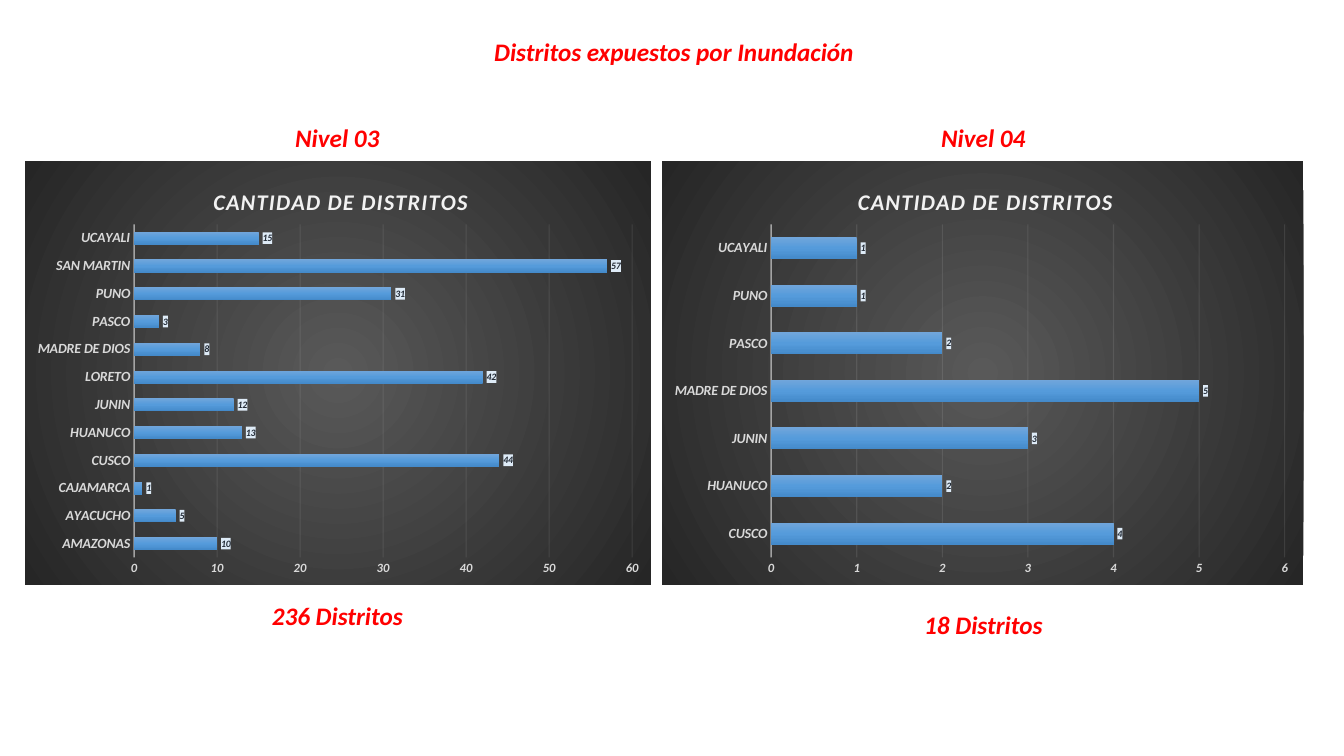
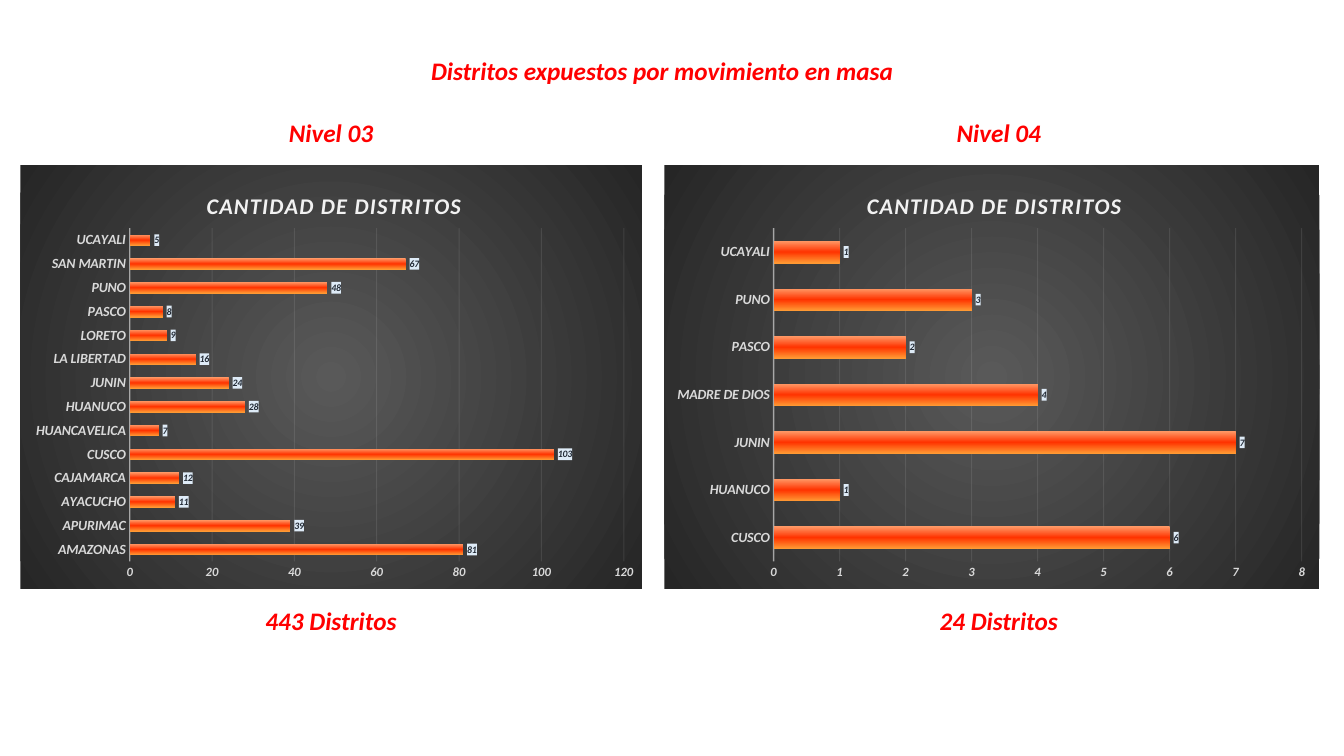
import pptx
import pptx.chart.data
import pptx.dml.color
import pptx.enum.chart
import pptx.enum.text
import pptx.oxml
import pptx.oxml.ns
import pptx.util

Pt = pptx.util.Pt
RGB = pptx.dml.color.RGBColor
RED = RGB(0xFF, 0x00, 0x00)
PALE = RGB(0xF2, 0xF2, 0xF2)
GREY = RGB(0xD9, 0xD9, 0xD9)
NAVY = RGB(0x22, 0x2A, 0x35)
ICE = RGB(0xDE, 0xEB, 0xF7)
DARK = [RGB(0x59, 0x59, 0x59), RGB(0x26, 0x26, 0x26)]
BLUE = [RGB(0x71, 0xA6, 0xDB), RGB(0x55, 0x9B, 0xDB), RGB(0x44, 0x8A, 0xCA)]
FIRE = [RGB(0xFF, 0x99, 0x66), RGB(0xFF, 0x33, 0x00), RGB(0xFF, 0x99, 0x33)]
FONT = "Calibri"
DOWN = '<a:lin ang="5400000" scaled="0"/>'
ROUND = ('<a:path path="circle"><a:fillToRect l="50000" t="50000" '
         'r="50000" b="50000"/></a:path>')


def node(text):
    return pptx.oxml.parse_xml(
        text.replace(">", " " + pptx.oxml.ns.nsdecls("a", "c") + ">", 1))


def blend(tints, way):
    step = 100000 // (len(tints) - 1)
    stops = "".join(f'<a:gs pos="{i * step}"><a:srgbClr val="{tint}"/></a:gs>'
                    for i, tint in enumerate(tints))
    return node(f'<c:spPr><a:gradFill rotWithShape="1"><a:gsLst>{stops}</a:gsLst>'
                f'{way}</a:gradFill><a:ln><a:noFill/></a:ln></c:spPr>')


def place(**parts):
    inner = '<c:layoutTarget val="inner"/>' if "w" in parts else ""
    modes = '<c:xMode val="edge"/><c:yMode val="edge"/>'
    spots = "".join(f'<c:{key} val="{val:.3f}"/>' for key, val in parts.items())
    return node(f"<c:layout><c:manualLayout>{inner}{modes}{spots}"
                "</c:manualLayout></c:layout>")


def fade(root, route, share):
    for tint in root.xpath(route + "//a:srgbClr"):
        tint.append(node(f'<a:alpha val="{share * 1000}"></a:alpha>'))


def clear(root):
    for old in root.xpath("c:layout"):
        root.remove(old)


class Deck:
    def __init__(self):
        self.show = pptx.Presentation()
        self.show.slide_width = Pt(960)
        self.show.slide_height = Pt(540)
        self.slide = None

    def page(self):
        self.slide = self.show.slides.add_slide(self.show.slide_layouts[6])

    def style(self, font, size, tint):
        font.name, font.size = FONT, Pt(size)
        font.bold = font.italic = True
        font.color.rgb = tint

    def label(self, text, mid, top, width=124, wrap=True):
        box = self.slide.shapes.add_textbox(
            Pt(mid - width / 2), Pt(top), Pt(width), Pt(29))
        frame = box.text_frame
        frame.word_wrap = wrap
        frame.text = text
        para = frame.paragraphs[0]
        para.alignment = pptx.enum.text.PP_ALIGN.CENTER
        self.style(para.runs[0].font, 18, RED)

    def bars(self, rows, tints, left, top, width, limit, step):
        high = 302.4
        data = pptx.chart.data.CategoryChartData(number_format="#,##0")
        data.categories = list(rows)
        data.add_series("Series 1", list(rows.values()))
        chart = self.slide.shapes.add_chart(
            pptx.enum.chart.XL_CHART_TYPE.BAR_CLUSTERED,
            Pt(left), Pt(top), Pt(width), Pt(high), data).chart
        chart.has_legend = False
        chart.font.name, chart.font.size = FONT, Pt(10)
        chart._chartSpace.xpath("c:chart")[0].addnext(blend(DARK, ROUND))
        self.head(chart, width)
        area = chart._chartSpace.xpath("c:chart/c:plotArea")[0]
        clear(area)
        area.insert(0, place(x=78 / width, y=45 / high,
                             w=(width - 91) / width, h=238 / high))
        self.axes(chart, limit, step)
        self.fill(chart.plots[0], tints)

    def head(self, chart, width):
        chart.has_title = True
        title = chart.chart_title
        title.include_in_layout = False
        title.text_frame.text = "CANTIDAD DE DISTRITOS"
        run = title.text_frame.paragraphs[0].runs[0]
        self.style(run.font, 16, PALE)
        run.font._element.set("spc", "100")
        clear(title._element)
        title._element.xpath("c:tx")[0].addnext(
            place(x=0.5 - 92 / width, y=0.05))

    def axes(self, chart, limit, step):
        cat, val = chart.category_axis, chart.value_axis
        for axis, size in ((cat, 10), (val, 9)):
            axis.major_tick_mark = pptx.enum.chart.XL_TICK_MARK.NONE
            axis.minor_tick_mark = pptx.enum.chart.XL_TICK_MARK.NONE
            self.style(axis.tick_labels.font, size, GREY)
        cat.format.line.width = Pt(1)
        cat.format.line.color.rgb = PALE
        fade(cat._element, "c:spPr", 54)
        val.minimum_scale, val.maximum_scale = 0, limit
        val.major_unit = step
        val.format.line.fill.background()
        grid = val.major_gridlines.format.line
        grid.width = Pt(0.75)
        grid.color.rgb = PALE
        fade(val._element, "c:majorGridlines", 10)

    def fill(self, plot, tints):
        plot.gap_width, plot.overlap = 115, -20
        plot.vary_by_categories = False
        series = plot.series[0]
        shape = series._element.get_or_add_spPr()
        shape.getparent().replace(shape, blend(tints, DOWN))
        plot.has_data_labels = True
        notes = plot.data_labels
        notes.show_value = True
        notes.number_format = "#,##0"
        notes.number_format_is_linked = False
        notes.position = pptx.enum.chart.XL_LABEL_POSITION.OUTSIDE_END
        self.style(notes.font, 7, NAVY)
        notes._element.xpath("c:txPr")[0].addprevious(node(
            f'<c:spPr><a:solidFill><a:srgbClr val="{ICE}"/></a:solidFill></c:spPr>'))


PAGES = [
    dict(title=("Distritos expuestos por Inundación", 481.5, 22.5, 274),
         tints=BLUE, level=83.5, top=115.2, sides=[
             dict(name="Nivel 03", total="236 Distritos", mid=241, foot=425.5,
                  left=18, width=447, limit=60, step=10,
                  rows={"AMAZONAS": 10, "AYACUCHO": 5, "CAJAMARCA": 1,
                        "CUSCO": 44, "HUANUCO": 13, "JUNIN": 12,
                        "LORETO": 42, "MADRE DE DIOS": 8, "PASCO": 3,
                        "PUNO": 31, "SAN MARTIN": 57, "UCAYALI": 15}),
             dict(name="Nivel 04", total="18 Distritos", mid=702.5, foot=432,
                  left=473, width=458, limit=6, step=1,
                  rows={"CUSCO": 4, "HUANUCO": 2, "JUNIN": 3,
                        "MADRE DE DIOS": 5, "PASCO": 2, "PUNO": 1,
                        "UCAYALI": 1})]),
    dict(title=("Distritos expuestos por movimiento en masa", 473, 36, 348),
         tints=FIRE, level=80, top=118, sides=[
             dict(name="Nivel 03", total="443 Distritos", mid=236.5, foot=429,
                  left=14.5, width=444, limit=120, step=20,
                  rows={"AMAZONAS": 81, "APURIMAC": 39, "AYACUCHO": 11,
                        "CAJAMARCA": 12, "CUSCO": 103, "HUANCAVELICA": 7,
                        "HUANUCO": 28, "JUNIN": 24, "LA LIBERTAD": 16,
                        "LORETO": 9, "PASCO": 8, "PUNO": 48,
                        "SAN MARTIN": 67, "UCAYALI": 5}),
             dict(name="Nivel 04", total="24 Distritos", mid=713.5, foot=429,
                  left=474.5, width=468, limit=8, step=1,
                  rows={"CUSCO": 6, "HUANUCO": 1, "JUNIN": 7,
                        "MADRE DE DIOS": 4, "PASCO": 2, "PUNO": 3,
                        "UCAYALI": 1})]),
]


def main():
    deck = Deck()
    for page in PAGES:
        deck.page()
        deck.label(*page["title"], wrap=False)
        for side in page["sides"]:
            deck.label(side["name"], side["mid"], page["level"])
            deck.bars(side["rows"], page["tints"], side["left"], page["top"],
                      side["width"], side["limit"], side["step"])
            deck.label(side["total"], side["mid"], side["foot"])
    deck.show.save("out.pptx")


if __name__ == "__main__":
    main()
